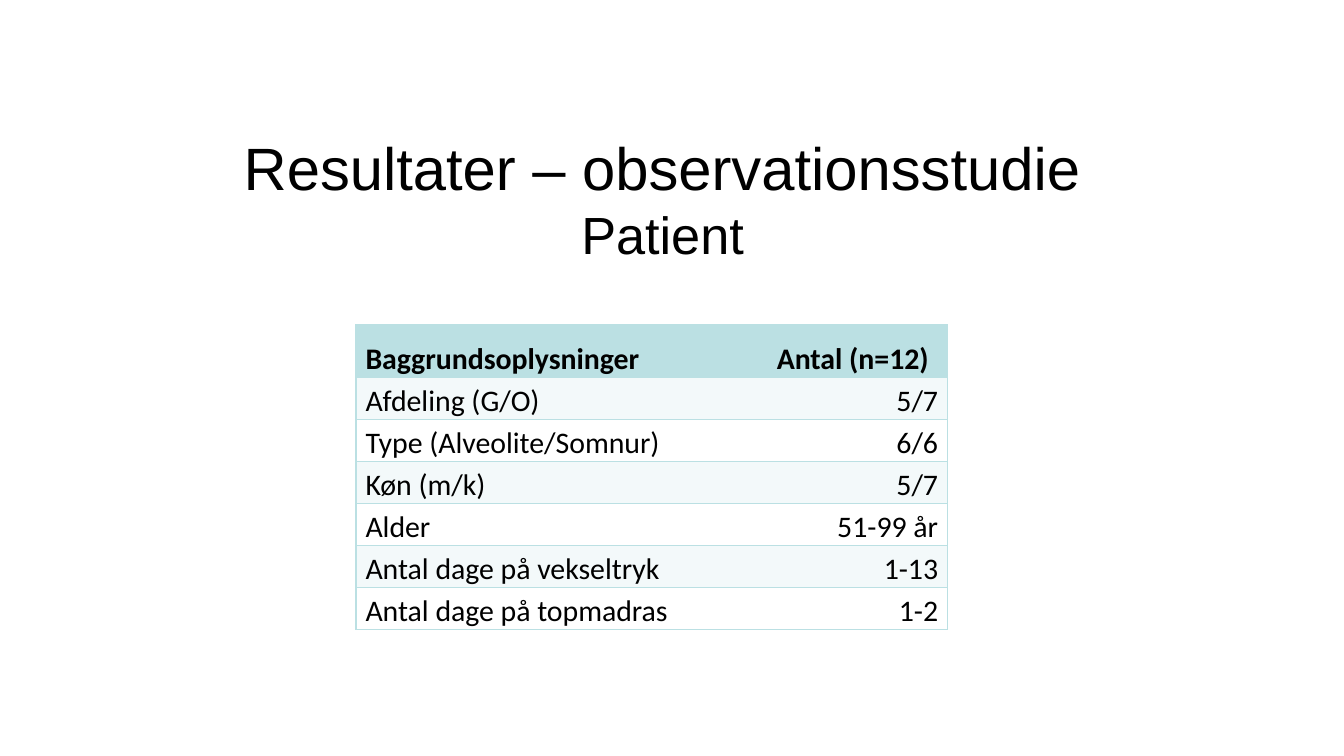
from lxml.etree import SubElement
from pptx import Presentation
from pptx.dml.color import RGBColor
from pptx.enum.text import MSO_ANCHOR as Anchor, PP_ALIGN as Align
from pptx.oxml.ns import qn
from pptx.util import Inches, Pt

TITLE_LINES = [("Resultater – observationsstudie", 32), ("Patient", 28)]
BACKGROUND_ROWS = [
    ("Baggrundsoplysninger", "Antal (n=12)"),
    ("Afdeling (G/O)", "5/7"),
    ("Type (Alveolite/Somnur)", "6/6"),
    ("Køn (m/k)", "5/7"),
    ("Alder", "51-99 år"),
    ("Antal dage på vekseltryk", "1-13"),
    ("Antal dage på topmadras", "1-2"),
]
COLUMN_WIDTHS = (3.06, 1.34)
HEADER_HEIGHT, ROW_HEIGHT = 0.39, 0.31
COLORS = {"text": "000000", "header": "BBE0E3", "border": "BBE0E3",
          "odd": "F3F9FA", "even": "FFFFFF"}


def rgb(name):
    return RGBColor.from_string(COLORS[name])


def style_font(font, name, size, bold=False):
    font.name, font.size, font.bold = name, Pt(size), bold
    font.color.rgb = rgb("text")


def add_borders(cell, visible_edges):
    """Draw the given edges (letters of LRTB) and hide the others."""
    properties = cell._tc.get_or_add_tcPr()
    for edge in "LRTB":
        line = SubElement(properties, qn(f"a:ln{edge}"), w=str(Pt(1)))
        if edge in visible_edges:
            fill = SubElement(line, qn("a:solidFill"))
            SubElement(fill, qn("a:srgbClr"), val=COLORS["border"])
        else:
            SubElement(line, qn("a:noFill"))


def add_title(slide):
    title = slide.shapes.title
    title.left, title.top = Inches(0.43), Inches(0.92)
    title.width, title.height = Inches(9), Inches(0.83)
    frame = title.text_frame
    frame.word_wrap = True
    frame.vertical_anchor = Anchor.TOP
    frame.margin_top = Inches(0.05)
    frame.text = "\n".join(text for text, _ in TITLE_LINES)
    for paragraph, (_, size) in zip(frame.paragraphs, TITLE_LINES):
        paragraph.alignment = Align.CENTER
        paragraph.space_before = Pt(0)
        paragraph.line_spacing = 1.0
        style_font(paragraph.font, "Arial", size)


def add_background_table(slide):
    row_count = len(BACKGROUND_ROWS)
    height = HEADER_HEIGHT + ROW_HEIGHT * (row_count - 1)
    table = slide.shapes.add_table(
        row_count, len(COLUMN_WIDTHS), Inches(2.65), Inches(2.42),
        Inches(sum(COLUMN_WIDTHS)), Inches(height)).table
    table.horz_banding = table.first_row = False
    for column, width in zip(table.columns, COLUMN_WIDTHS):
        column.width = Inches(width)

    for r, values in enumerate(BACKGROUND_ROWS):
        is_header = r == 0
        table.rows[r].height = Inches(HEADER_HEIGHT if is_header else ROW_HEIGHT)
        for c, value in enumerate(values):
            is_number = c == 1 and not is_header
            cell = table.cell(r, c)
            add_borders(cell, "TB" + "LR"[c])
            cell.fill.solid()
            cell.fill.fore_color.rgb = rgb(
                "header" if is_header else "odd" if r % 2 else "even")
            cell.margin_left = cell.margin_right = Inches(0.07)
            cell.margin_top = cell.margin_bottom = 0
            cell.vertical_anchor = Anchor.MIDDLE if is_number else Anchor.BOTTOM
            cell.text = value
            paragraph = cell.text_frame.paragraphs[0]
            paragraph.alignment = Align.RIGHT if is_number else Align.JUSTIFY
            paragraph.line_spacing = 1.15
            style_font(paragraph.font, "Calibri", 16, is_header)


def main():
    deck = Presentation()
    deck.slide_width = Inches(10)
    deck.slide_height = deck.slide_width * 9 // 16
    slide = deck.slides.add_slide(deck.slide_layouts[5])
    add_title(slide)
    add_background_table(slide)
    deck.save("out.pptx")


if __name__ == "__main__":
    main()
